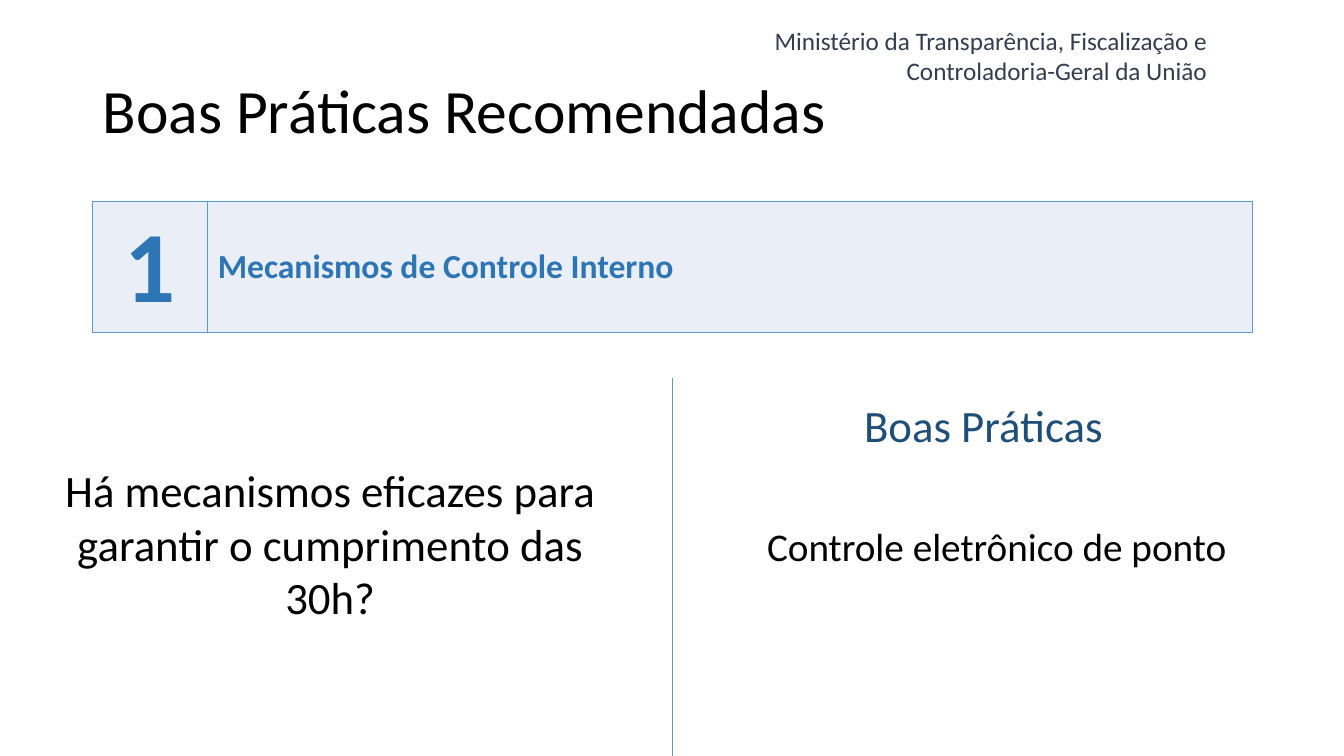
from dataclasses import dataclass

from lxml.etree import SubElement
from pptx import Presentation
from pptx.dml.color import RGBColor
from pptx.enum.shapes import MSO_CONNECTOR
from pptx.enum.text import MSO_ANCHOR, PP_ALIGN
from pptx.oxml.ns import qn
from pptx.util import Inches, Pt


@dataclass(frozen=True)
class Theme:
    """Colours, font and type sizes of the slide."""
    font: str = "Calibri"
    black: str = "000000"
    slate: str = "333F50"
    navy: str = "1F4E79"
    blue: str = "2E75B6"
    line: str = "5B9BD5"
    band: str = "EAEFF7"
    header: int = 18
    topic: int = 24
    answer: int = 28
    question: int = 32
    title: int = 44
    number: int = 72


THEME = Theme()


def write(frame, text, size, color, align=PP_ALIGN.LEFT, bold=False, spacing=1.0):
    """Write one formatted paragraph into a text frame."""
    para = frame.paragraphs[0]
    para.alignment, para.line_spacing = align, spacing
    span = para.add_run()
    span.text = text
    for name, value in {"name": THEME.font, "size": Pt(size), "bold": bold}.items():
        setattr(span.font, name, value)
    span.font.color.rgb = RGBColor.from_string(color)


def add_text(page, place, text, size, color, anchor=MSO_ANCHOR.TOP, **style):
    """Add a wrapping text box at left, top, width, height."""
    box = page.shapes.add_textbox(*map(Inches, place))
    for name, value in {"word_wrap": True, "vertical_anchor": anchor}.items():
        setattr(box.text_frame, name, value)
    write(box.text_frame, text, size, color, **style)


def style_cell(cell):
    """Give a cell its band fill and thin borders."""
    cell.vertical_anchor = MSO_ANCHOR.MIDDLE
    properties = cell._tc.get_or_add_tcPr()
    for side in ("a:lnL", "a:lnR", "a:lnT", "a:lnB"):
        border = SubElement(properties, qn(side), w=str(Pt(1)))
        fill = SubElement(border, qn("a:solidFill"))
        SubElement(fill, qn("a:srgbClr"), val=THEME.line)
    cell.fill.solid()
    cell.fill.fore_color.rgb = RGBColor.from_string(THEME.band)


def add_topic(page, number, topic):
    """Add the one-row table with the topic number and name."""
    place = map(Inches, (0.92, 2, 11.5, 1.3))
    table = page.shapes.add_table(1, 2, *place).table
    table.first_row = table.horz_banding = False
    for column, width in zip(table.columns, (1.14, 10.36)):
        column.width = Inches(width)
    for cell in table.iter_cells():
        style_cell(cell)
    write(table.cell(0, 0).text_frame, number, THEME.number, THEME.blue,
          align=PP_ALIGN.CENTER, bold=True)
    write(table.cell(0, 1).text_frame, topic, THEME.topic, THEME.blue, bold=True)


def add_divider(page):
    """Add the vertical line between the two halves."""
    ends = map(Inches, (6.67, 3.75, 6.67, 7.5))
    divider = page.shapes.add_connector(MSO_CONNECTOR.STRAIGHT, *ends)
    divider.line.color.rgb = RGBColor.from_string(THEME.line)
    divider.line.width = Pt(0.5)
    SubElement(divider._element.spPr, qn("a:effectLst"))


def main():
    """Build and save the slide."""
    deck = Presentation()
    deck.slide_width, deck.slide_height = Inches(13.33), Inches(7.5)
    page = deck.slides.add_slide(deck.slide_layouts[6])
    add_text(page, (7.51, 0.2, 4.56, 0.71),
             "Ministério da Transparência, Fiscalização e Controladoria-Geral da União",
             THEME.header, THEME.slate, align=PP_ALIGN.RIGHT)
    add_text(page, (0.92, 0.4, 11.5, 1.45), "Boas Práticas Recomendadas",
             THEME.title, THEME.black, anchor=MSO_ANCHOR.MIDDLE, spacing=0.9)
    add_topic(page, "1", "Mecanismos de Controle Interno")
    add_text(page, (0.38, 4.54, 5.79, 1.72),
             "Há mecanismos eficazes para garantir o cumprimento das 30h?",
             THEME.question, THEME.black, align=PP_ALIGN.CENTER)
    add_text(page, (6.99, 5.13, 5.79, 0.57), "Controle eletrônico de ponto",
             THEME.answer, THEME.black, align=PP_ALIGN.CENTER)
    add_text(page, (6.86, 3.9, 5.79, 0.64), "Boas Práticas",
             THEME.question, THEME.navy, align=PP_ALIGN.CENTER)
    add_divider(page)
    deck.save("out.pptx")


if __name__ == "__main__":
    main()
